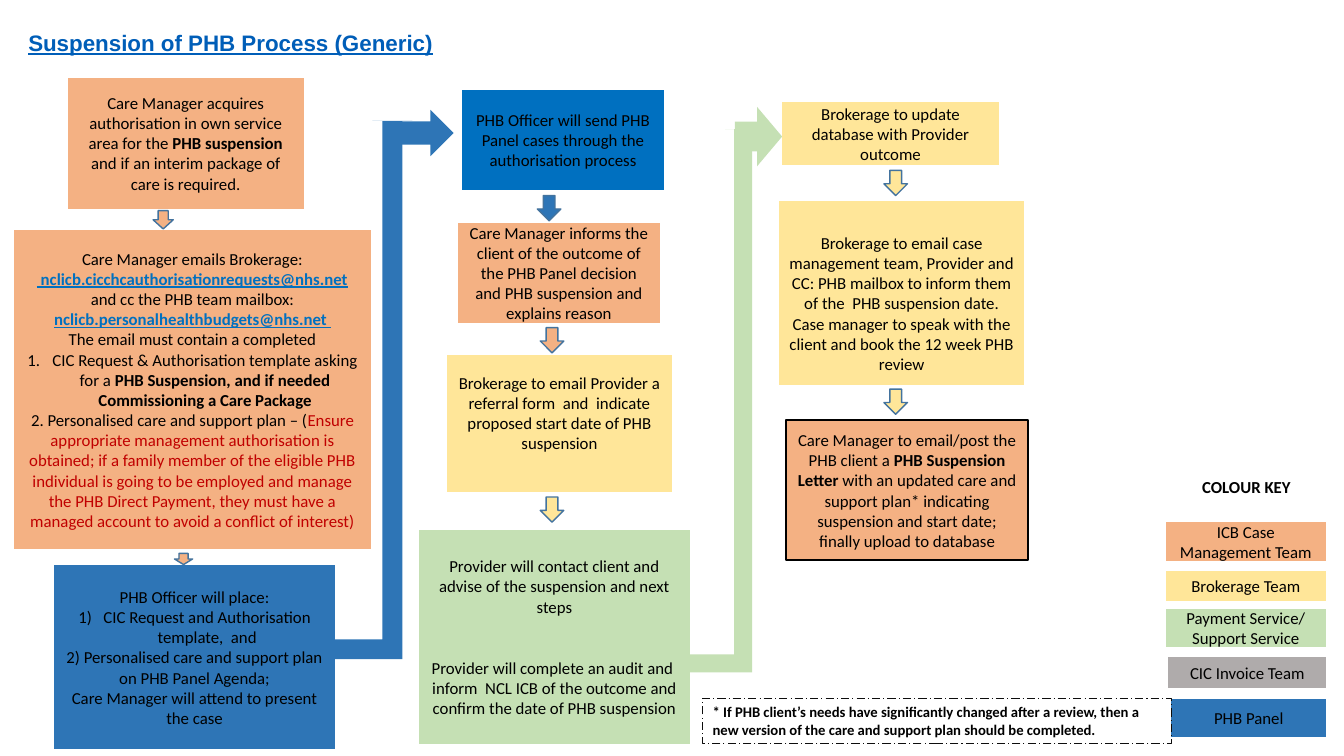
"""Draw the flow chart for suspending a PHB."""
from dataclasses import dataclass
from typing import Optional

from lxml.etree import SubElement
from pptx import Presentation
from pptx.dml.color import RGBColor
from pptx.enum.dml import MSO_LINE
from pptx.enum.shapes import MSO_SHAPE
from pptx.enum.text import MSO_ANCHOR, PP_ALIGN
from pptx.oxml.ns import qn
from pptx.util import Pt

BLACK = RGBColor(0x00, 0x00, 0x00)
TITLE = RGBColor(0x00, 0x5E, 0xB8)
LINK = RGBColor(0x00, 0x70, 0xC0)
RED = RGBColor(0xC0, 0x00, 0x00)
ORANGE = RGBColor(0xF4, 0xB1, 0x83)
YELLOW = RGBColor(0xFF, 0xE6, 0x99)
GREEN = RGBColor(0xC5, 0xE0, 0xB4)
GREY = RGBColor(0xAF, 0xAB, 0xAB)
BLUE = RGBColor(0x2E, 0x75, 0xB6)
EDGE = RGBColor(0x43, 0x73, 0x9E)
INK = RGBColor(0x0D, 0x0D, 0x0D)
LINE = 14.65
INSET = 3.6


@dataclass
class Run:
    text: str
    bold: bool = False
    color: Optional[RGBColor] = None
    under: bool = False


@dataclass
class Para:
    runs: list[Run]
    number: str = ""
    before: float = 0


@dataclass
class Box:
    left: float
    top: float
    width: float
    height: float
    fill: Optional[RGBColor]
    paras: list[Para]
    line: Optional[RGBColor] = None
    weight: float = 1
    head: float = 0
    foot: float = 0


@dataclass
class Arrow:
    kind: MSO_SHAPE
    left: float
    top: float
    width: float
    height: float
    fill: RGBColor
    line: Optional[RGBColor] = None
    adjust: tuple[float, ...] = ()


def say(*texts: str) -> list[Para]:
    """Make one plain paragraph from each text."""
    return [Para([Run(text)]) for text in texts]


def paint(shape, fill: Optional[RGBColor], line: Optional[RGBColor], weight: float = 1) -> None:
    """Set the fill and outline of a shape."""
    shape.shadow.inherit = False
    if fill is None:
        shape.fill.background()
    else:
        shape.fill.solid()
        shape.fill.fore_color.rgb = fill
    if line is None:
        shape.line.fill.background()
    else:
        shape.line.color.rgb = line
        shape.line.width = Pt(weight)


def write(frame, paras: list[Para], size: float = 12, face: str = "Calibri",
          align: PP_ALIGN = PP_ALIGN.CENTER) -> None:
    """Fill a text frame with paragraphs."""
    frame.word_wrap = True
    for index, para in enumerate(paras):
        target = frame.add_paragraph() if index else frame.paragraphs[0]
        target.alignment = align
        if para.before:
            target.space_before = Pt(para.before)
        if para.number:
            props = target._p.get_or_add_pPr()
            props.set("marL", str(Pt(18)))
            props.set("indent", str(-Pt(18)))
            SubElement(props, qn("a:buAutoNum"), type=para.number)
        first = para.runs[0]
        font = target.font
        font.size, font.name = Pt(size), face
        if all(run.color == first.color for run in para.runs):
            font.color.rgb = first.color or BLACK
        else:
            font.color.rgb = BLACK
        same = all(run.bold == first.bold for run in para.runs)
        if same:
            font.bold = first.bold
        for run in para.runs:
            part = target.add_run()
            part.text = run.text
            if not same:
                part.font.bold = run.bold
            if run.under:
                part.font.underline = True
            if run.color and run.color != font.color.rgb:
                part.font.color.rgb = run.color


def draw_box(slide, box: Box) -> None:
    """Draw a process box with centred text."""
    shape = slide.shapes.add_shape(MSO_SHAPE.FLOWCHART_PROCESS, Pt(box.left), Pt(box.top),
                                   Pt(box.width), Pt(box.height))
    paint(shape, box.fill, box.line, box.weight)
    frame = shape.text_frame
    frame.vertical_anchor = MSO_ANCHOR.MIDDLE
    frame.margin_top, frame.margin_bottom = Pt(INSET + box.head), Pt(INSET + box.foot)
    write(frame, box.paras)


def draw_arrow(slide, arrow: Arrow) -> None:
    """Draw a block arrow."""
    shape = slide.shapes.add_shape(arrow.kind, Pt(arrow.left), Pt(arrow.top),
                                   Pt(arrow.width), Pt(arrow.height))
    paint(shape, arrow.fill, arrow.line)
    for index, value in enumerate(arrow.adjust):
        shape.adjustments[index] = value


def down(left: float, top: float, fill: RGBColor, width: float = 16.8, height: float = 18) -> Arrow:
    """Describe a small arrow between two steps."""
    return Arrow(MSO_SHAPE.DOWN_ARROW, left, top, width, height, fill, EDGE)


BEND = (0.25, 0.25, 0)
ARROWS = [
    Arrow(MSO_SHAPE.BENT_UP_ARROW, 237.6, 86.4, 56.9, 384.5, BLUE, adjust=BEND),
    Arrow(MSO_SHAPE.RIGHT_ARROW, 286.6, 78.5, 37.4, 33.1, BLUE),
    Arrow(MSO_SHAPE.BENT_UP_ARROW, 492.5, 92.2, 51.1, 388, GREEN, adjust=BEND),
    Arrow(MSO_SHAPE.RIGHT_ARROW, 524.9, 76.3, 33.8, 42.5, GREEN, adjust=(0.5, 0.53)),
    down(109.4, 150.5, ORANGE, 14.4, 13),
    down(124.6, 395.3, ORANGE, 13, 8),
    down(383.8, 139.7, BLUE),
    down(385.9, 234, ORANGE),
    down(385.9, 355, YELLOW),
    down(631.4, 121.7, YELLOW),
    down(631.4, 277.9, YELLOW),
]

STEPS = [
    Box(48.5, 55.4, 168.5, 93.6, ORANGE, [Para([
        Run("Care Manager acquires authorisation in own service area for the "),
        Run("PHB suspension ", True),
        Run("and if an interim package of care is required.")])]),
    Box(10.1, 164.2, 254.9, 228.2, ORANGE, [
        *say("Care Manager emails Brokerage:"),
        Para([Run(" nclicb.cicchcauthorisationrequests@nhs.net", True, LINK, True)]),
        Para([Run("and cc the PHB team mailbox: "),
              Run("nclicb.personalhealthbudgets@nhs.net ", True, LINK, True)]),
        *say("The email must contain a completed"),
        Para([Run("CIC Request & Authorisation template asking for a "),
              Run("PHB Suspension, and if needed Commissioning a Care Package", True)],
             "arabicPeriod"),
        Para([Run("2. Personalised care and support plan – ("),
              Run("Ensure appropriate management authorisation is obtained; if a family member "
                  "of the eligible PHB individual is going to be employed and manage the PHB "
                  "Direct Payment, they must have a managed account to avoid a conflict of "
                  "interest)", color=RED)])]),
    Box(38.9, 403.9, 200.2, 131, BLUE, [
        *say("PHB Officer will place:"),
        Para([Run("CIC Request and Authorisation template,  and")], "arabicParenR"),
        *say("2) Personalised care and support plan on PHB Panel Agenda;",
             "Care Manager will attend to present the case")]),
    Box(329.8, 64.1, 144.7, 72, LINK, say(
        "PHB Officer will send PHB Panel cases through the authorisation process")),
    Box(326.9, 159.1, 144.7, 71.3, ORANGE, say(
        "Care Manager informs the client of the outcome of the PHB Panel decision and PHB "
        "suspension and explains reason")),
    Box(319, 253.4, 161.3, 97.9, YELLOW, say(
        "Brokerage to email Provider a referral form  and  indicate proposed start date of "
        "PHB suspension"), foot=LINE),
    Box(299.5, 378.7, 193, 152.6, GREEN, [
        *say("Provider will contact client and advise of the suspension and next steps"),
        Para([Run("Provider will complete an audit and  inform  NCL ICB of the outcome and "
                  "confirm the date of PHB suspension")], before=2 * LINE)]),
    Box(558.7, 72.7, 154.8, 45.4, YELLOW, say(
        "Brokerage to update database with Provider outcome")),
    Box(556.6, 143.3, 175, 131.8, YELLOW, say(
        "Brokerage to email case management team, Provider and CC: PHB mailbox to inform "
        "them of the  PHB suspension date.",
        "Case manager to speak with the client and book the 12 week PHB review"), head=LINE),
    Box(561.6, 300.2, 172.8, 100.1, ORANGE, [Para([
        Run("Care Manager to email/post the PHB client a "),
        Run("PHB Suspension Letter ", True),
        Run("with an updated care and support plan* indicating suspension and start date; "
            "finally upload to database")])], BLACK, 1.5),
]

KEYS = [
    Box(833, 373, 113.8, 27.4, ORANGE, say("ICB Case Management Team")),
    Box(833, 408.2, 113.8, 20.9, YELLOW, say("Brokerage Team")),
    Box(833, 434.9, 113.8, 27.4, GREEN, say("Payment Service/", "Support Service")),
    Box(834.5, 469.4, 113, 22.3, GREY, say("CIC Invoice Team")),
    Box(836.6, 499, 110.9, 27.4, BLUE, say("PHB Panel")),
]


def main() -> None:
    """Build the slide and save it."""
    deck = Presentation()
    deck.slide_width, deck.slide_height = Pt(960), Pt(540)
    slide = deck.slides.add_slide(deck.slide_layouts[6])
    title = slide.shapes.add_textbox(Pt(20.2), Pt(23), Pt(832.3), Pt(38.9)).text_frame
    title.margin_left = title.margin_top = title.margin_right = title.margin_bottom = 0
    write(title, [Para([Run("Suspension of PHB Process (Generic)", True, TITLE, True)])],
          16, "Arial", PP_ALIGN.LEFT)
    title.paragraphs[0].line_spacing = 0.9
    for arrow in ARROWS:
        draw_arrow(slide, arrow)
    for box in STEPS + KEYS:
        draw_box(slide, box)
    label = slide.shapes.add_textbox(Pt(824.4), Pt(337), Pt(131.8), Pt(21.6))
    write(label.text_frame, [Para([Run("COLOUR KEY", True)])])
    note = slide.shapes.add_textbox(Pt(502), Pt(498.6), Pt(334.6), Pt(32.4))
    paint(note, None, INK, 0.75)
    note.line.dash_style = MSO_LINE.LONG_DASH_DOT
    write(note.text_frame, [Para([Run(
        "* If PHB client’s needs have significantly changed after a review, then a new version "
        "of the care and support plan should be completed.", True)])], 10.5, align=PP_ALIGN.LEFT)
    deck.save("out.pptx")


if __name__ == "__main__":
    main()
